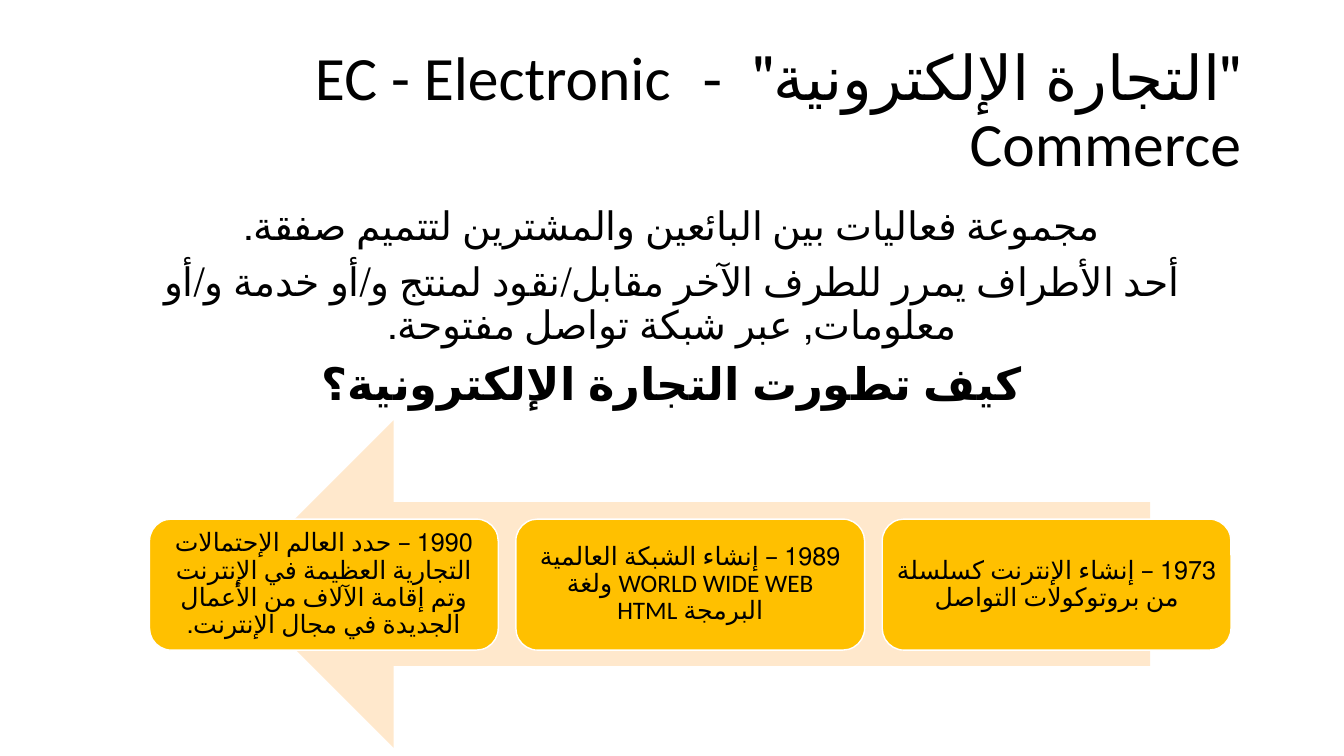
from lxml.etree import SubElement
from pptx import Presentation
from pptx.dml.color import RGBColor
from pptx.enum.lang import MSO_LANGUAGE_ID as LANG
from pptx.enum.shapes import MSO_SHAPE as SHAPE
from pptx.enum.text import MSO_ANCHOR as ANCHOR, MSO_AUTO_SIZE as AUTO, PP_ALIGN as ALIGN
from pptx.oxml.ns import qn
from pptx.util import Pt

BLACK = RGBColor(0x00, 0x00, 0x00)
WHITE = RGBColor(0xFF, 0xFF, 0xFF)
AMBER = RGBColor(0xFF, 0xC0, 0x00)
PEACH = RGBColor(0xFF, 0xE8, 0xCC)


def write(p, text, size, bold=False, align=ALIGN.CENTER, before=0):
    """Fill a right-to-left paragraph that has no bullet."""
    p.alignment = align
    p.line_spacing = 0.9
    p.space_before = Pt(before)
    pPr = p._p.get_or_add_pPr()
    for name, value in (("rtl", "1"), ("marL", "0"), ("indent", "0")):
        pPr.set(name, value)
    SubElement(pPr, qn("a:buNone"))
    r = p.add_run()
    r.text = text
    r.font.name = "Calibri"
    r.font.language_id = LANG.ARABIC
    r.font.size = Pt(size)
    r.font.bold = bold
    r.font.color.rgb = BLACK


def place(sp, left, top, width, height):
    sp.left, sp.top, sp.width, sp.height = Pt(left), Pt(top), Pt(width), Pt(height)


prs = Presentation()
prs.slide_width, prs.slide_height = Pt(960), Pt(540)
s = prs.slides.add_slide(prs.slide_layouts[1])

# Title
title = s.shapes.title
place(title, 66, 28.8, 828, 104.4)
tf = title.text_frame
tf.auto_size = AUTO.NONE
tf.vertical_anchor = ANCHOR.MIDDLE
write(tf.paragraphs[0], '"التجارة الإلكترونية"  -  EC - Electronic Commerce', 44, align=ALIGN.RIGHT)

# Definition and question
body = s.placeholders[1]
place(body, 66, 144, 828, 342.7)
tf = body.text_frame
tf.auto_size = AUTO.NONE
lines = [
    ("مجموعة فعاليات بين البائعين والمشترين لتتميم صفقة.", 28, False),
    ("أحد الأطراف يمرر للطرف الآخر مقابل/نقود لمنتج و/أو خدمة و/أو معلومات, عبر شبكة تواصل مفتوحة.", 28, False),
    ("كيف تطورت التجارة الإلكترونية؟", 32, True),
]
for i, (text, size, bold) in enumerate(lines):
    p = tf.add_paragraph() if i else tf.paragraphs[0]
    write(p, text, size, bold=bold, before=10)

# Timeline, running from right to left
arrow = s.shapes.add_shape(SHAPE.LEFT_ARROW, Pt(164.2), Pt(300.2), Pt(657.4), Pt(234))
arrow.shadow.inherit = False
arrow.fill.solid()
arrow.fill.fore_color.rgb = PEACH
arrow.line.fill.background()

milestones = [
    "1973 – إنشاء الإنترنت كسلسلة من بروتوكولات التواصل",
    "1989 – إنشاء الشبكة العالمية WORLD WIDE WEB ولغة البرمجة HTML",
    "1990 – حدد العالم الإحتمالات التجارية العظيمة في الإنترنت وتم إقامة الآلاف من الأعمال الجديدة في مجال الإنترنت.",
]
for i, text in enumerate(milestones):
    box = s.shapes.add_shape(SHAPE.ROUNDED_RECTANGLE, Pt(630.2 - i * 261.7), Pt(370.8), Pt(249.1), Pt(93.6))
    box.shadow.inherit = False
    box.fill.solid()
    box.fill.fore_color.rgb = AMBER
    box.line.color.rgb = WHITE
    box.line.width = Pt(1)
    tf = box.text_frame
    tf.word_wrap = True
    tf.vertical_anchor = ANCHOR.MIDDLE
    tf.margin_left = tf.margin_right = tf.margin_top = tf.margin_bottom = Pt(5)
    write(tf.paragraphs[0], text, 18)

prs.save("out.pptx")
